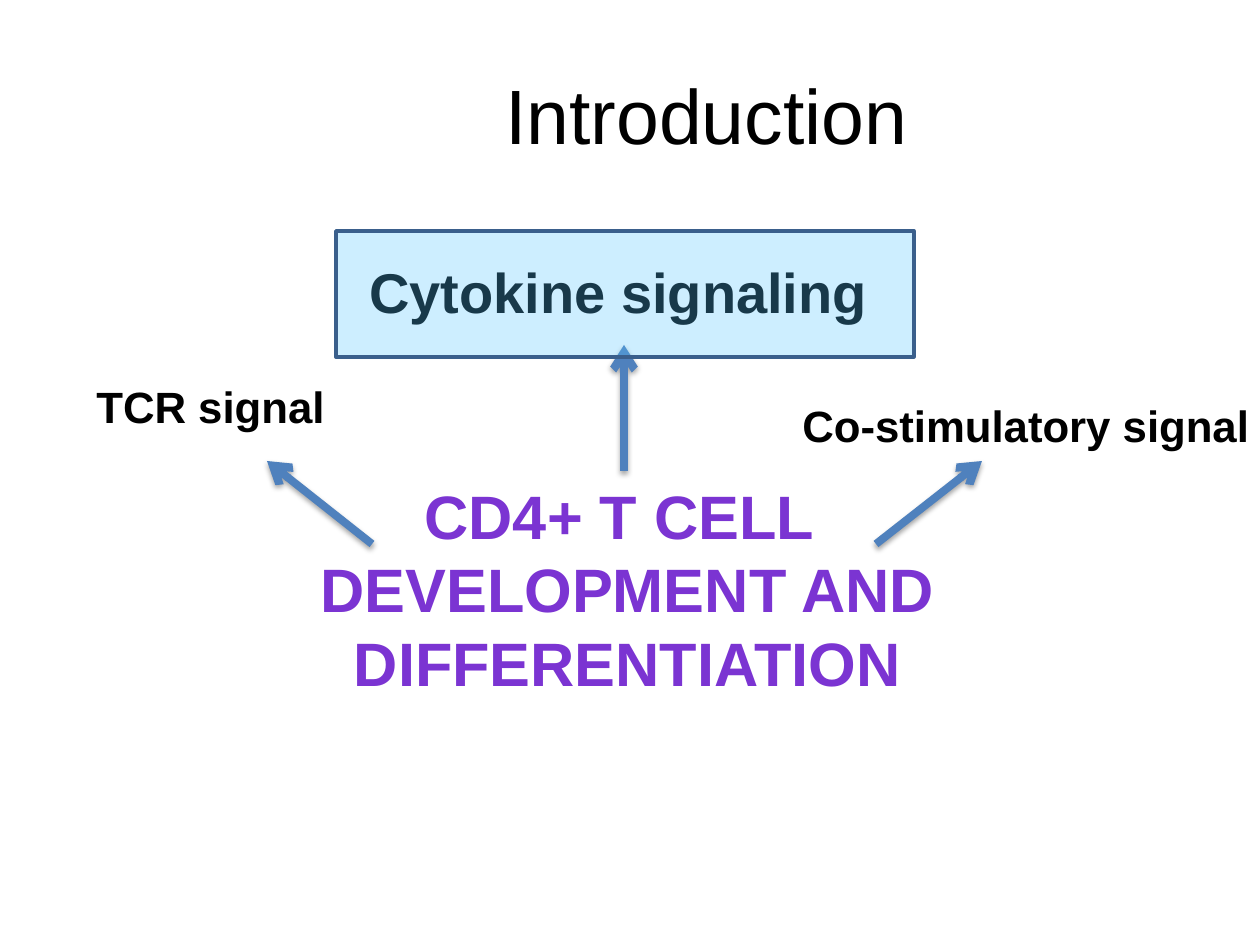
"""Build the introduction slide on signals behind CD4+ T cell development."""
from dataclasses import dataclass

from lxml import etree
from pptx import Presentation
from pptx.dml.color import RGBColor
from pptx.enum.shapes import MSO_CONNECTOR, MSO_SHAPE
from pptx.enum.text import MSO_ANCHOR, PP_ALIGN
from pptx.oxml.ns import qn
from pptx.util import Emu, Pt

LEFT, CENTER = PP_ALIGN.LEFT, PP_ALIGN.CENTER
TOP, MIDDLE = MSO_ANCHOR.TOP, MSO_ANCHOR.MIDDLE
STRAIGHT, RECTANGLE = MSO_CONNECTOR.STRAIGHT, MSO_SHAPE.RECTANGLE


@dataclass(frozen=True)
class Theme:
    font: str = "Arial"
    ink: str = "000000"
    topic: str = "7B34D2"
    arrow: str = "4F81BD"
    frame_fill: str = "56C5FF"
    frame_line: str = "3A5F8C"
    title_size: float = 44
    topic_size: float = 35
    main_size: float = 32
    side_size: float = 25
    arrow_width: float = 4.5
    frame_width: float = 2
    frame_opacity: int = 29
    shadow_opacity: int = 35
    shadow_blur: float = 3.1
    shadow_distance: float = 1.8


THEME = Theme()
SLIDE_SIZE = (1260, 945)

TITLE = (["Introduction"], (226, 35, 961, 158), THEME.title_size, False, THEME.ink, CENTER, MIDDLE, True)
TOPIC = (["CD4+ T CELL ", "DEVELOPMENT AND DIFFERENTIATION"], (294, 472, 667, 236),
         THEME.topic_size, True, THEME.topic, CENTER, TOP, True)
SIGNALS = [
    ("Cytokine signaling", (357, 251, 528, 81), THEME.main_size),
    ("Co-stimulatory signal", (790, 393, 478, 66), THEME.side_size),
    ("TCR signal", (84, 374, 256, 66), THEME.side_size),
]
ARROWS = [
    ((624, 471), (624, 345)),
    ((876, 544), (982, 461)),
    ((372, 544), (267, 461)),
]
FRAME = (336, 231, 578, 126)


def px(*lengths):
    return [Emu(round(length * 914400 / 126)) for length in lengths]


def color(value):
    return RGBColor.from_string(value)


def add_text(slide, lines, place, size, bold, ink, align, anchor, wrap):
    frame = slide.shapes.add_textbox(*px(*place)).text_frame
    frame.word_wrap = wrap
    frame.vertical_anchor = anchor
    for index, line in enumerate(lines):
        paragraph = frame.add_paragraph() if index else frame.paragraphs[0]
        paragraph.alignment = align
        run = paragraph.add_run()
        run.text = line
        run.font.name = THEME.font
        run.font.size = Pt(size)
        run.font.bold = bold
        run.font.color.rgb = color(ink)


def add_alpha(color_element, percent):
    etree.SubElement(color_element, qn("a:alpha"), val=str(percent * 1000))


def add_arrow(slide, start, end):
    arrow = slide.shapes.add_connector(STRAIGHT, *px(*start, *end))
    arrow.line.color.rgb = color(THEME.arrow)
    arrow.line.width = Pt(THEME.arrow_width)
    etree.SubElement(arrow.line._get_or_add_ln(), qn("a:tailEnd"), type="arrow")
    effects = etree.SubElement(arrow._element.spPr, qn("a:effectLst"))
    shadow = etree.SubElement(
        effects, qn("a:outerShdw"), blurRad=str(Pt(THEME.shadow_blur)),
        dist=str(Pt(THEME.shadow_distance)), dir="5400000", rotWithShape="0")
    add_alpha(etree.SubElement(shadow, qn("a:srgbClr"), val=THEME.ink), THEME.shadow_opacity)


def add_frame(slide, place):
    frame = slide.shapes.add_shape(RECTANGLE, *px(*place))
    frame.shadow.inherit = False
    frame.fill.solid()
    frame.fill.fore_color.rgb = color(THEME.frame_fill)
    add_alpha(frame._element.spPr.find(qn("a:solidFill")).find(qn("a:srgbClr")), THEME.frame_opacity)
    frame.line.color.rgb = color(THEME.frame_line)
    frame.line.width = Pt(THEME.frame_width)


def main():
    deck = Presentation()
    deck.slide_width, deck.slide_height = px(*SLIDE_SIZE)
    slide = deck.slides.add_slide(deck.slide_layouts[6])
    add_text(slide, *TITLE)
    add_text(slide, *TOPIC)
    for start, end in ARROWS:
        add_arrow(slide, start, end)
    for label, place, size in SIGNALS:
        add_text(slide, [label], place, size, True, THEME.ink, LEFT, TOP, False)
    add_frame(slide, FRAME)
    deck.save("out.pptx")


if __name__ == "__main__":
    main()
